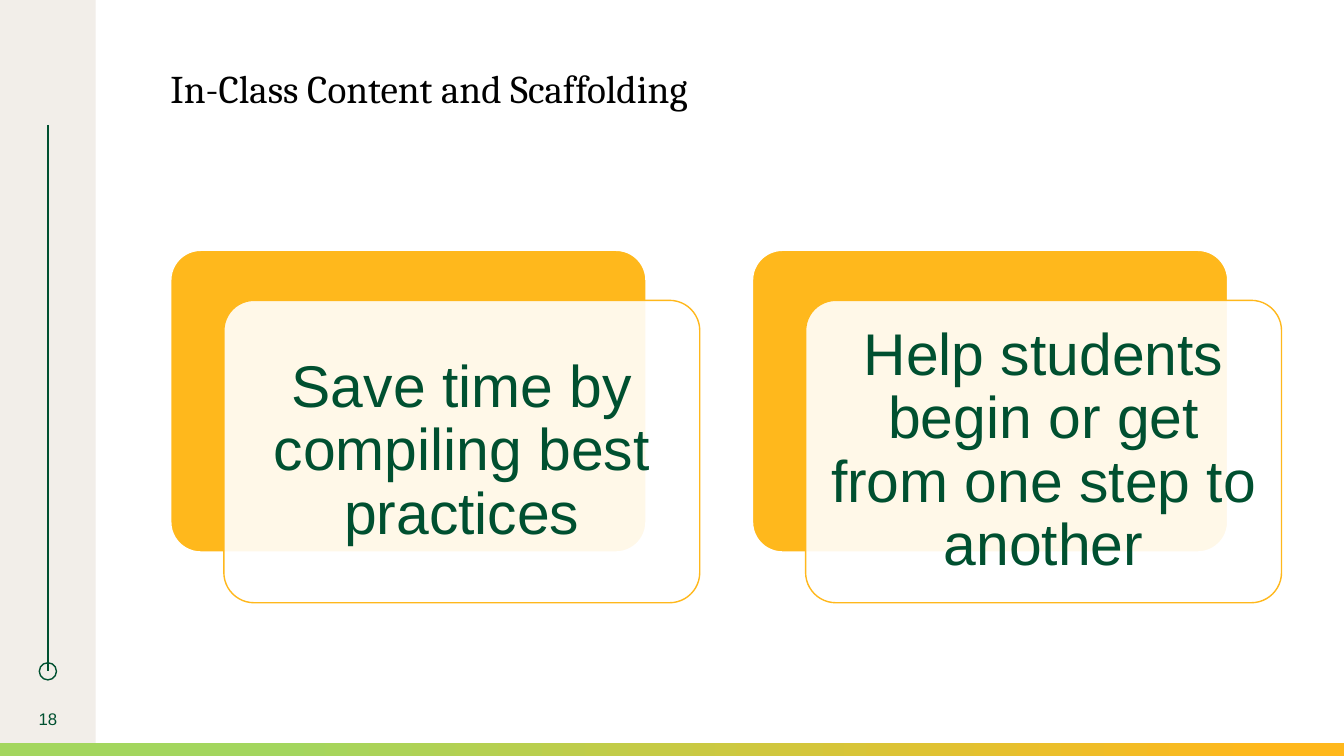
from lxml.etree import SubElement
from pptx import Presentation
from pptx.dml.color import RGBColor
from pptx.enum.shapes import MSO_CONNECTOR, MSO_SHAPE
from pptx.enum.text import MSO_ANCHOR, MSO_AUTO_SIZE, PP_ALIGN
from pptx.oxml.ns import qn
from pptx.util import Inches, Pt

WIDTH, HEIGHT = 13.33, 7.5
GREEN, GOLD, LIME, SAND, WHITE = "005030", "FFB81C", "A3D65E", "F2EEE9", "FFFFFF"

# Layout grid
RAIL_W = 0.95
LEFT, TOP = 1.69, 2.48
COLUMN = 5.77
CARD_W, CARD_H = 4.72, 3
SHIFT_X, SHIFT_Y = 0.53, 0.5
INSET = 0.08
CARDS = ["Save time by compiling best practices",
         "Help students begin or get from one step to another"]


def rgb(value):
    return RGBColor.from_string(value)


def add_box(s, kind, x, y, w, h, fill=None, line=None, weight=1):
    sp = s.shapes.add_shape(kind, Inches(x), Inches(y), Inches(w), Inches(h))
    sp.shadow.inherit = False
    if fill:
        sp.fill.solid()
        sp.fill.fore_color.rgb = rgb(fill)
    else:
        sp.fill.background()
    if line:
        sp.line.color.rgb = rgb(line)
        sp.line.width = Pt(weight)
    else:
        sp.line.fill.background()
    return sp


def set_alpha(sp, percent):
    color = sp.fill._xPr.find(qn("a:solidFill"))[0]
    SubElement(color, qn("a:alpha")).set("val", str(percent * 1000))


def write(tf, text, size, font, color, align, anchor, inset=0, spacing=None):
    tf.word_wrap = True
    tf.auto_size = MSO_AUTO_SIZE.NONE
    tf.vertical_anchor = anchor
    tf.margin_left = tf.margin_right = Inches(inset)
    tf.margin_top = tf.margin_bottom = Inches(inset)
    p = tf.paragraphs[0]
    p.alignment = align
    if spacing:
        p.line_spacing = spacing
    r = p.add_run()
    r.text = text
    r.font.size = Pt(size)
    r.font.name = font
    r.font.color.rgb = rgb(color)


def add_label(s, text, x, y, w, h, size, inset=0, spacing=None):
    box = s.shapes.add_textbox(Inches(x), Inches(y), Inches(w), Inches(h))
    write(box.text_frame, text, size, "Arial", GREEN,
          PP_ALIGN.CENTER, MSO_ANCHOR.MIDDLE, inset, spacing)


def add_rail(s):
    add_box(s, MSO_SHAPE.RECTANGLE, 0, 0, RAIL_W, HEIGHT, SAND)
    middle, end, ring = RAIL_W / 2, 6.66, 0.17
    line = s.shapes.add_connector(MSO_CONNECTOR.STRAIGHT, Inches(middle), Inches(1.24),
                                  Inches(middle), Inches(end))
    line.line.color.rgb = rgb(GREEN)
    line.line.width = Pt(1)
    SubElement(line._element.spPr, qn("a:effectLst"))
    add_box(s, MSO_SHAPE.OVAL, middle - ring / 2, end - ring / 2, ring, ring, line=GREEN)
    add_label(s, "18", 0, 6.93, RAIL_W, 0.4, 12)


def add_footer_band(s):
    band = 0.13
    sp = add_box(s, MSO_SHAPE.RECTANGLE, 0, HEIGHT - band, WIDTH, band)
    sp.fill.gradient()
    sp.fill.gradient_angle = 180
    for stop, position, color in zip(sp.fill.gradient_stops, (0.05, 0.79), (GOLD, LIME)):
        stop.position = position
        stop.color.rgb = rgb(color)


def add_title(s, text):
    title = s.shapes.title
    title.left, title.top = Inches(LEFT), Inches(0.69)
    title.width, title.height = Inches(6.02), Inches(0.45)
    write(title.text_frame, text, 28, "Cambria", "000000",
          PP_ALIGN.LEFT, MSO_ANCHOR.TOP, spacing=0.9)


def add_card(s, x, y, text):
    front_x, front_y = x + SHIFT_X, y + SHIFT_Y
    back = add_box(s, MSO_SHAPE.ROUNDED_RECTANGLE, x, y, CARD_W, CARD_H, GOLD, WHITE, 1.5)
    front = add_box(s, MSO_SHAPE.ROUNDED_RECTANGLE, front_x, front_y,
                    CARD_W, CARD_H, WHITE, GOLD)
    for sp in (back, front):
        sp.adjustments[0] = 0.1
    set_alpha(front, 90)
    add_label(s, text, front_x + INSET, front_y + INSET, CARD_W - 2 * INSET,
              CARD_H - 2 * INSET, 42, inset=0.17, spacing=0.9)


def main():
    prs = Presentation()
    prs.slide_width, prs.slide_height = Inches(WIDTH), Inches(HEIGHT)
    s = prs.slides.add_slide(prs.slide_layouts[5])

    # Side rail and bottom band
    add_rail(s)
    add_footer_band(s)

    # Title and cards
    add_title(s, "In-Class Content and Scaffolding")
    for i, text in enumerate(CARDS):
        add_card(s, LEFT + i * COLUMN, TOP, text)

    prs.save("out.pptx")


if __name__ == "__main__":
    main()
